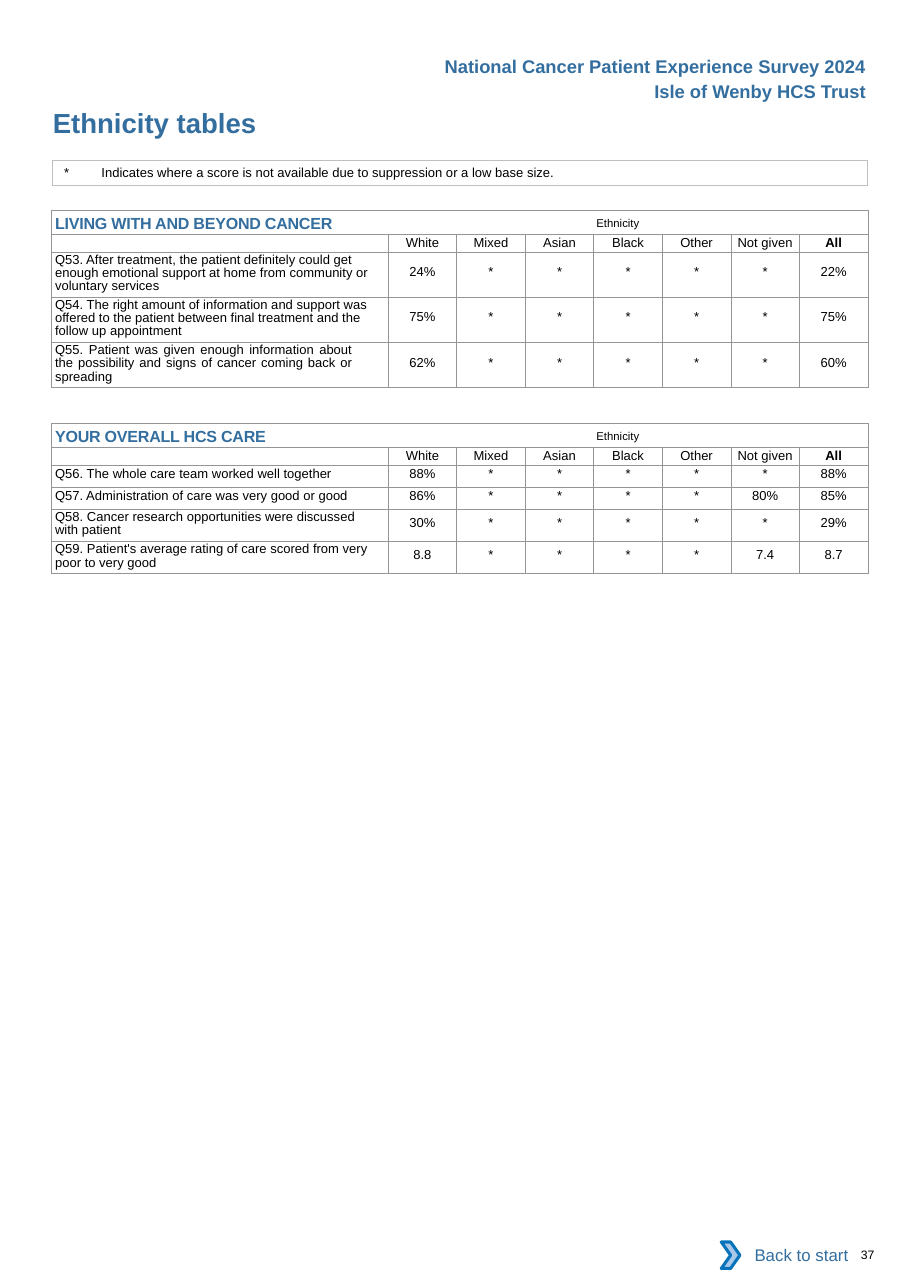
from lxml import etree
from pptx import Presentation, util as u
from pptx.dml.color import RGBColor
from pptx.enum import shapes, text
from pptx.oxml.ns import qn


class Theme:
    font = "Arial"
    blue = RGBColor.from_string("336E9F")
    black = RGBColor.from_string("000000")
    frame = RGBColor.from_string("BFBFBF")
    sky = RGBColor.from_string("A8C7E9")
    edge = RGBColor.from_string("0A74BB")
    grid = "939598"
    title, head, topic, link = 18, 12, 10.5, 11
    group, body, page = 12.8, 8.5, 8


LEFT, MID, RIGHT = text.PP_ALIGN.LEFT, text.PP_ALIGN.CENTER, text.PP_ALIGN.RIGHT
JUST = text.PP_ALIGN.JUSTIFY
CENTRE = text.MSO_ANCHOR.MIDDLE


def write(frame, words, size, hue=Theme.black, bold=False, align=LEFT):
    """Fill the first paragraph of a text frame and return it."""
    para = frame.paragraphs[0]
    para.text = words
    para.alignment = align
    for run in para.runs:
        run.font.name = Theme.font
        run.font.size = u.Pt(size)
        run.font.bold = bold
        run.font.color.rgb = hue
    return para


def add_tab(para, place):
    stops = etree.SubElement(para._p.get_or_add_pPr(), qn("a:tabLst"))
    etree.SubElement(stops, qn("a:tab"), pos=str(u.Cm(place)), algn="l")


deck = Presentation()
deck.slide_width, deck.slide_height = u.Cm(20.98), u.Cm(29.69)
slide = deck.slides.add_slide(deck.slide_layouts[6])

# Headings, link and page number
labels = [
    ("National Cancer Patient Experience Survey 2024", 9.96, 1.15, 10.26, 0.76,
     Theme.head, Theme.blue, True, RIGHT, 0.25),
    ("Isle of Wenby HCS Trust", 9.96, 1.73, 10.26, 0.76,
     Theme.head, Theme.blue, True, RIGHT, 0.25),
    ("Ethnicity tables", 1.22, 2.44, 11.4, 0.76,
     Theme.title, Theme.blue, True, LEFT, 0),
    ("Back to start", 16.81, 28.4, 3, 1.07,
     Theme.link, Theme.blue, False, RIGHT, 0.25),
    ("37", 19.85, 28.76, 1, 0.33,
     Theme.page, Theme.black, False, LEFT, 0),
]
for words, left, top, wide, high, size, hue, bold, align, side in labels:
    frame = slide.shapes.add_textbox(*map(u.Cm, (left, top, wide, high))).text_frame
    frame.word_wrap = True
    frame.vertical_anchor = CENTRE
    frame.margin_left = frame.margin_right = u.Cm(side)
    frame.margin_top = frame.margin_bottom = 0
    write(frame, words, size, hue, bold, align)

# Note on suppressed scores
note = slide.shapes.add_shape(
    shapes.MSO_SHAPE.RECTANGLE, u.Cm(1.2), u.Cm(3.7), u.Cm(18.81), u.Cm(0.57))
note.shadow.inherit = False
note.fill.background()
note.line.color.rgb = Theme.frame
note.line.width = u.Pt(0.5)
frame = note.text_frame
frame.vertical_anchor = text.MSO_ANCHOR.TOP
frame.margin_left, frame.margin_right = u.Cm(0.28), 0
frame.margin_top = frame.margin_bottom = u.Cm(0.1)
para = write(frame, "*\tIndicates where a score is not available due to "
             "suppression or a low base size.", Theme.body)
add_tab(para, 0.86)

# Score tables: question, scores, row height, top inset of the scores
heads = ["", "White", "Mixed", "Asian", "Black", "Other", "Not given", "All"]
tables = [
    ("LIVING WITH AND BEYOND CANCER", 4.85, [
        ("Q53. After treatment, the patient definitely could get enough emotional "
         "support at home from community or voluntary services",
         "24% * * * * * 22%", 1.04, 0.3),
        ("Q54. The right amount of information and support was offered to the "
         "patient between final treatment and the follow up appointment",
         "75% * * * * * 75%", 1.04, 0.3),
        ("Q55. Patient was given enough information about the possibility and "
         "signs of cancer coming back or spreading",
         "62% * * * * * 60%", 1.04, 0.3),
    ]),
    ("YOUR OVERALL HCS CARE", 9.76, [
        ("Q56. The whole care team worked well together",
         "88% * * * * * 88%", 0.51, 0.03),
        ("Q57. Administration of care was very good or good",
         "86% * * * * 80% 85%", 0.51, 0.03),
        ("Q58. Cancer research opportunities were discussed with patient",
         "30% * * * * * 29%", 0.74, 0.15),
        ("Q59. Patient's average rating of care scored from very poor to very good",
         "8.8 * * * * 7.4 8.7", 0.74, 0.15),
    ]),
]
for topic, top, asks in tables:
    highs = [0.55, 0.41] + [ask[2] for ask in asks]
    grid = slide.shapes.add_table(
        len(highs), len(heads), u.Cm(1.19), u.Cm(top),
        u.Cm(18.82), u.Cm(sum(highs))).table
    grid.first_row = grid.horz_banding = False
    for col, wide in zip(grid.columns, [7.76] + [1.58] * 7):
        col.width = u.Cm(wide)
    for row, high in zip(grid.rows, highs):
        row.height = u.Cm(high)

    for cell in grid.iter_cells():
        cell.margin_left = cell.margin_right = 0
        cell.margin_top = cell.margin_bottom = 0
        cell.fill.background()
        props = cell._tc.get_or_add_tcPr()
        for spot, side in enumerate(("lnL", "lnR", "lnT", "lnB")):
            line = etree.Element(qn("a:" + side), w=str(u.Pt(0.5)))
            fill = etree.SubElement(line, qn("a:solidFill"))
            etree.SubElement(fill, qn("a:srgbClr"), val=Theme.grid)
            props.insert(spot, line)
        end = cell.text_frame.paragraphs[0]._p.get_or_add_endParaRPr()
        end.set("sz", str(int(Theme.body * 100)))

    banner = grid.cell(0, 0)
    banner.merge(grid.cell(0, len(heads) - 1))
    banner.vertical_anchor = CENTRE
    banner.margin_left = u.Cm(0.08)
    para = write(banner.text_frame, topic + "\t", Theme.topic, Theme.blue, True)
    add_tab(para, 12.48)
    para.runs[0]._r.get_or_add_rPr().set("spc", "-10")
    run = para.add_run()
    run.text = "Ethnicity"
    run.font.name, run.font.size = Theme.font, u.Pt(Theme.group)
    run.font.color.rgb = Theme.black
    run._r.get_or_add_rPr().set("baseline", "10000")

    for x, head in enumerate(heads):
        cell = grid.cell(1, x)
        cell.vertical_anchor = CENTRE
        para = write(cell.text_frame, head, Theme.body, bold=head == "All", align=MID)
        para.line_spacing = u.Pt(9.9)

    for y, (ask, marks, high, inset) in enumerate(asks, 2):
        cell = grid.cell(y, 0)
        even = ask.startswith("Q55")
        cell.margin_left = u.Cm(0.08)
        cell.margin_right = u.Cm(0.83 if even else 0.36)
        cell.margin_top = u.Cm(0.05 if high > 0.6 else 0.03)
        para = write(cell.text_frame, ask, Theme.body, align=JUST if even else LEFT)
        if high > 0.6:
            para.line_spacing = u.Pt(8.6)
        for x, mark in enumerate(marks.split(), 1):
            cell = grid.cell(y, x)
            cell.margin_top = u.Cm(inset)
            write(cell.text_frame, mark, Theme.body, align=MID)

# Arrow beside the link
arrow = slide.shapes.add_shape(
    shapes.MSO_SHAPE.CHEVRON, u.Cm(16.63), u.Cm(28.63), u.Cm(0.43), u.Cm(0.61))
arrow.shadow.inherit = False
arrow.fill.solid()
arrow.fill.fore_color.rgb = Theme.sky
arrow.line.color.rgb = Theme.edge
arrow.line.width = u.Pt(2)

deck.save("out.pptx")
